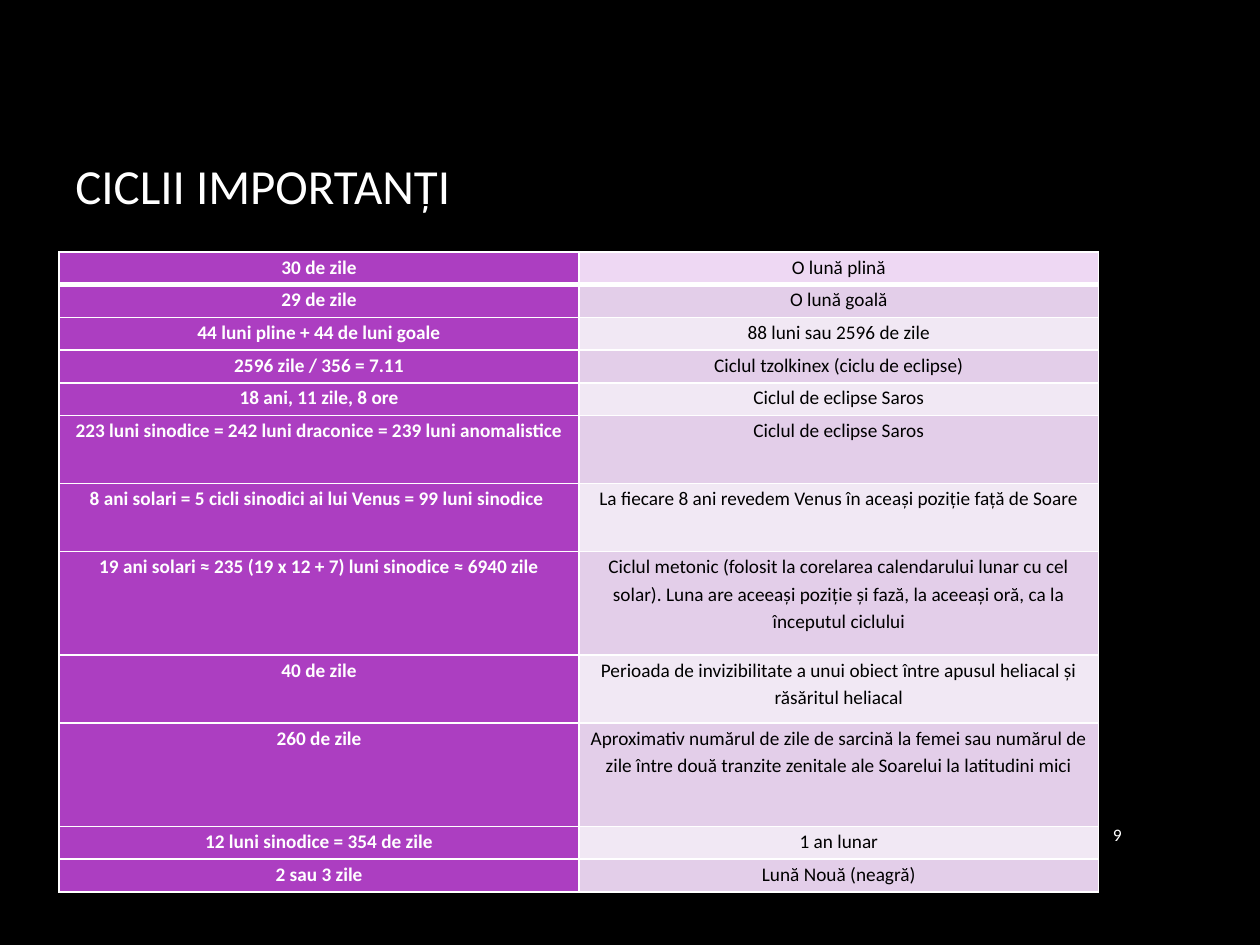
from lxml.etree import SubElement as Sub
from pptx import Presentation
from pptx.dml.color import RGBColor as RGB
from pptx.enum.text import MSO_ANCHOR as Anchor, PP_ALIGN as Align
from pptx.oxml.ns import qn
from pptx.util import Inches, Pt

FONT = "Calibri"
HUES = {
    "back": "000000",
    "light": "FFFFFF",
    "dark": "000000",
    "key": "AC3EC1",
    "head": "EED8F3",
    "odd": "E3CEE9",
    "even": "F1E8F4",
}

# Cycle, meaning, row height in inches
ROWS = [
    ("30 de zile", "O lună plină", 0.26),
    ("29 de zile", "O lună goală", 0.26),
    ("44 luni pline + 44 de luni goale", "88 luni sau 2596 de zile", 0.26),
    ("2596 zile / 356 = 7.11", "Ciclul tzolkinex (ciclu de eclipse)", 0.26),
    ("18 ani, 11 zile, 8 ore", "Ciclul de eclipse Saros", 0.26),
    ("223 luni sinodice = 242 luni draconice = 239 luni anomalistice",
     "Ciclul de eclipse Saros", 0.54),
    ("8 ani solari = 5 cicli sinodici ai lui Venus = 99 luni sinodice ",
     "La fiecare 8 ani revedem Venus în aceași poziție față de Soare", 0.54),
    ("19 ani solari ≈ 235 (19 x 12 + 7) luni sinodice ≈ 6940 zile",
     "Ciclul metonic (folosit la corelarea calendarului lunar cu cel solar). "
     "Luna are aceeași poziție și fază, la aceeași oră, ca la începutul ciclului",
     0.82),
    ("40 de zile",
     "Perioada de invizibilitate a unui obiect între apusul heliacal și "
     "răsăritul heliacal", 0.54),
    ("260 de zile",
     "Aproximativ numărul de zile de sarcină la femei sau numărul de zile "
     "între două tranzite zenitale ale Soarelui la latitudini mici", 0.82),
    ("12 luni sinodice = 354 de zile", "1 an lunar", 0.26),
    ("2 sau 3 zile", "Lună Nouă (neagră)", 0.26),
]


def style(para, size, hue, align, bold=False):
    para.alignment = align
    for run in para.runs:
        font = run.font
        font.name, font.size, font.bold = FONT, Pt(size), bold
        font.color.rgb = RGB.from_string(HUES[hue])


def add_label(slide, box, text, size, align):
    frame = slide.shapes.add_textbox(*map(Inches, box)).text_frame
    frame.word_wrap = True
    frame.vertical_anchor = Anchor.MIDDLE
    frame.text = text
    style(frame.paragraphs[0], size, "light", align)


def add_edges(cell, widths):
    """Draw cell borders; they must come before the fill."""
    props = cell._tc.get_or_add_tcPr()
    for spot, (side, width) in enumerate(widths.items()):
        line = Sub(props, qn(f"a:ln{side}"), w=str(Pt(width)))
        fill = Sub(line, qn("a:solidFill"))
        Sub(fill, qn("a:srgbClr"), val=HUES["light"])
        props.insert(spot, line)


def fill_cell(cell, text, fill, hue, bold):
    cell.margin_left = cell.margin_right = Inches(0.07)
    cell.margin_top = cell.margin_bottom = 0
    cell.fill.solid()
    cell.fill.fore_color.rgb = RGB.from_string(HUES[fill])
    cell.text_frame.text = text
    para = cell.text_frame.paragraphs[0]
    para.line_spacing = 1.15
    style(para, 11, hue, Align.CENTER, bold)


def add_cycles(slide, box):
    table = slide.shapes.add_table(len(ROWS), 2, *map(Inches, box)).table
    for col in table.columns:
        col.width = Inches(box[2] / 2)
    for i, (cycle, note, height) in enumerate(ROWS):
        table.rows[i].height = Inches(height)
        band = "head" if i == 0 else "odd" if i % 2 else "even"
        fill_cell(table.cell(i, 0), cycle, "key", "light", True)
        fill_cell(table.cell(i, 1), note, band, "dark", False)
        # A thick rule parts the first row from the rest
        edges = {"L": 1, "R": 1, "T": 3 if i == 1 else 1, "B": 3 if i == 0 else 1}
        for j in range(2):
            add_edges(table.cell(i, j), edges)


def main():
    deck = Presentation()
    deck.slide_width, deck.slide_height = Inches(10), Inches(7.5)
    slide = deck.slides.add_slide(deck.slide_layouts[6])
    back = slide.background.fill
    back.solid()
    back.fore_color.rgb = RGB.from_string(HUES["back"])

    # Title, page number, table
    add_label(slide, (0.5, 0.67, 8.5, 1.59), "CICLII IMPORTANȚI", 28, Align.LEFT)
    add_label(slide, (8.54, 6.42, 0.46, 0.41), "9", 10, Align.RIGHT)
    add_cycles(slide, (0.47, 2, 8.25, 5.08))
    deck.save("out.pptx")


if __name__ == "__main__":
    main()
